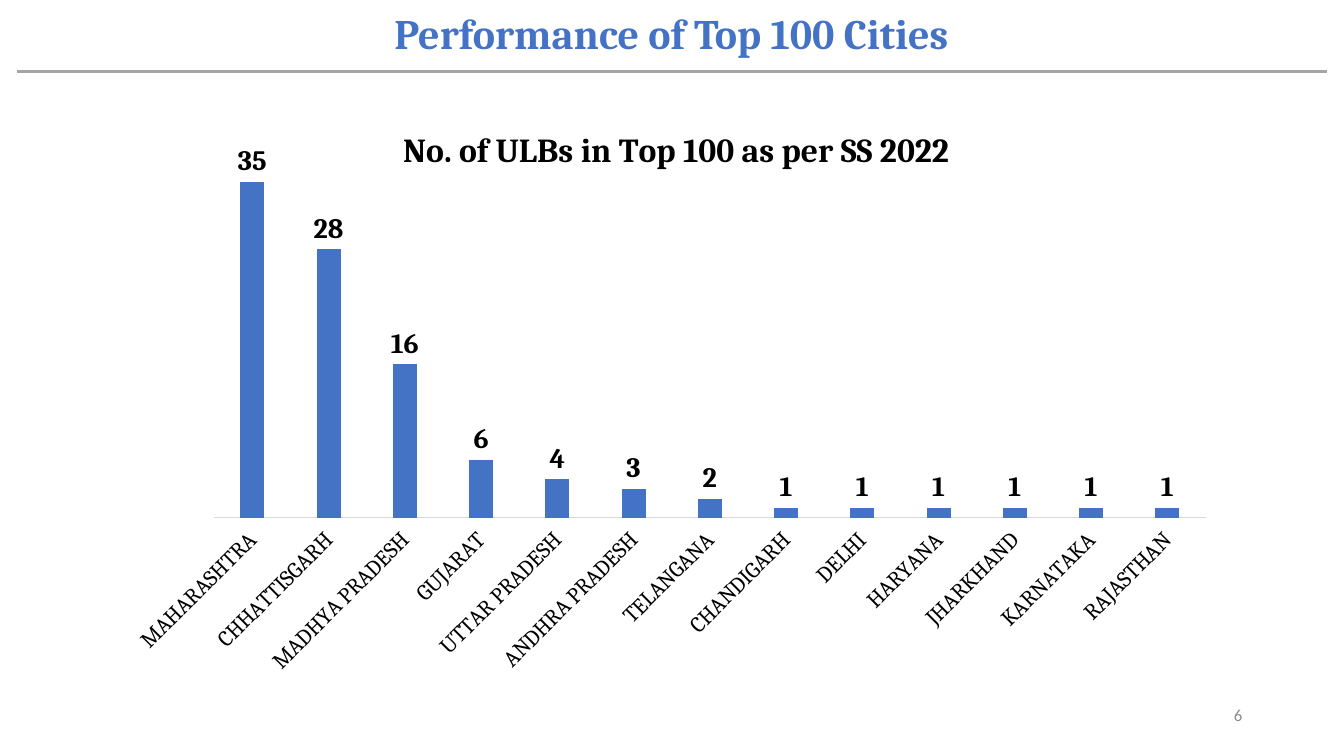
from lxml.etree import SubElement
from pptx import Presentation
from pptx.chart.data import CategoryChartData
from pptx.dml.color import RGBColor
from pptx.enum.chart import XL_CHART_TYPE, XL_LABEL_POSITION, XL_TICK_LABEL_POSITION, XL_TICK_MARK
from pptx.enum.shapes import MSO_CONNECTOR
from pptx.enum.text import MSO_ANCHOR, PP_ALIGN
from pptx.oxml.ns import qn
from pptx.util import Emu, Pt

# Content
HEADING = "Performance of Top 100 Cities"
CHART_TITLE = "No. of ULBs in Top 100 as per SS 2022"
PAGE_NUMBER = "6"
ULBS_BY_STATE = {
    "MAHARASHTRA": 35,
    "CHHATTISGARH": 28,
    "MADHYA PRADESH": 16,
    "GUJARAT": 6,
    "UTTAR PRADESH": 4,
    "ANDHRA PRADESH": 3,
    "TELANGANA": 2,
    "CHANDIGARH": 1,
    "DELHI": 1,
    "HARYANA": 1,
    "JHARKHAND": 1,
    "KARNATAKA": 1,
    "RAJASTHAN": 1,
}
BLUE, GRAY, PALE, MUTED, BLACK = "4472C4", "A5A5A5", "D9D9D9", "8B8B8B", "000000"

# Lengths in px, 100 px to the inch
SLIDE_SIZE = (1333, 750)
HEADING_BOX = (136, 8, 1060, 56)
RULE = (17, 71, 1316, 71)
NUMBER_BOX = (942, 689, 300, 40)
CHART_BOX = (113, 95, 1106, 580)
PLOT_BOX = (213, 181, 983, 333)
TITLE_CORNER = (394, 121)


def px(*lengths):
    return [Emu(length * 9144) for length in lengths]


def color(hex_code):
    return RGBColor.from_string(hex_code)


def style(font, size, hex_code, bold=False, name="Cambria"):
    font.size, font.bold, font.name = Pt(size), bold, name
    font.color.rgb = color(hex_code)


def add_text(box, text, align, anchor, **look):
    frame = slide.shapes.add_textbox(*px(*box)).text_frame
    frame.word_wrap = True
    frame.vertical_anchor = anchor
    frame.text = text
    line = frame.paragraphs[0]
    line.alignment = align
    style(line.runs[0].font, **look)
    return line


def place(part, order, left, top, *size):
    """Fix a chart part at a px position; order is where its layout element belongs."""
    chart_left, chart_top, chart_width, chart_height = CHART_BOX
    shares = [("x", (left - chart_left) / chart_width), ("y", (top - chart_top) / chart_height)]
    modes = [("xMode", "edge"), ("yMode", "edge")]
    if size:
        modes.insert(0, ("layoutTarget", "inner"))
        shares += [("w", size[0] / chart_width), ("h", size[1] / chart_height)]
    for old in part.findall(qn("c:layout")):
        part.remove(old)
    layout = SubElement(part, qn("c:layout"))
    part.insert(order, layout)
    manual = SubElement(layout, qn("c:manualLayout"))
    for tag, value in modes + shares:
        text = value if isinstance(value, str) else f"{value:.3f}"
        SubElement(manual, qn(f"c:{tag}")).set("val", text)


deck = Presentation()
deck.slide_width, deck.slide_height = px(*SLIDE_SIZE)
slide = deck.slides.add_slide(deck.slide_layouts[6])

# Heading and rule
heading = add_text(HEADING_BOX, HEADING, PP_ALIGN.CENTER, MSO_ANCHOR.TOP,
                   size=30, hex_code=BLUE, bold=True)
heading.line_spacing = 0.9
rule = slide.shapes.add_connector(MSO_CONNECTOR.STRAIGHT, *px(*RULE))
rule.line.color.rgb = color(GRAY)
rule.line.width = Pt(2.25)
SubElement(rule._element.spPr, qn("a:effectLst"))

# Page number
add_text(NUMBER_BOX, PAGE_NUMBER, PP_ALIGN.RIGHT, MSO_ANCHOR.MIDDLE,
         size=12, hex_code=MUTED, name="Calibri")

# Chart
ulb_data = CategoryChartData()
ulb_data.categories = list(ULBS_BY_STATE)
ulb_data.add_series("Series 1", list(ULBS_BY_STATE.values()))
chart = slide.shapes.add_chart(XL_CHART_TYPE.COLUMN_CLUSTERED, *px(*CHART_BOX), ulb_data).chart
style(chart.font, 10, BLACK, name="Arial")
chart.has_legend = False

# Chart title
chart.has_title = True
title = chart.chart_title
title.text_frame.text = CHART_TITLE
style(title.text_frame.paragraphs[0].runs[0].font, 24, BLACK, bold=True)
place(title._element, 1, *TITLE_CORNER)

# Columns and their values
columns = chart.plots[0]
columns.gap_width, columns.overlap = 219, -27
columns.vary_by_categories = False
fill = columns.series[0].format.fill
fill.solid()
fill.fore_color.rgb = color(BLUE)
columns.has_data_labels = True
values = columns.data_labels
values.show_value = True
values.position = XL_LABEL_POSITION.OUTSIDE_END
style(values.font, 20, BLACK, bold=True)

# Axes
states = chart.category_axis
states.major_tick_mark = XL_TICK_MARK.NONE
states.tick_label_position = XL_TICK_LABEL_POSITION.LOW
states.format.line.color.rgb = color(PALE)
states.format.line.width = Pt(0.75)
style(states.tick_labels.font, 16, BLACK)
states._element.txPr.find(qn("a:bodyPr")).set("rot", "-2700000")
counts = chart.value_axis
counts.minimum_scale, counts.maximum_scale = 0, max(ULBS_BY_STATE.values())
counts.has_major_gridlines = False
counts.visible = False

# Plot area position
place(chart._chartSpace.chart.plotArea, 0, *PLOT_BOX)

deck.save("out.pptx")
